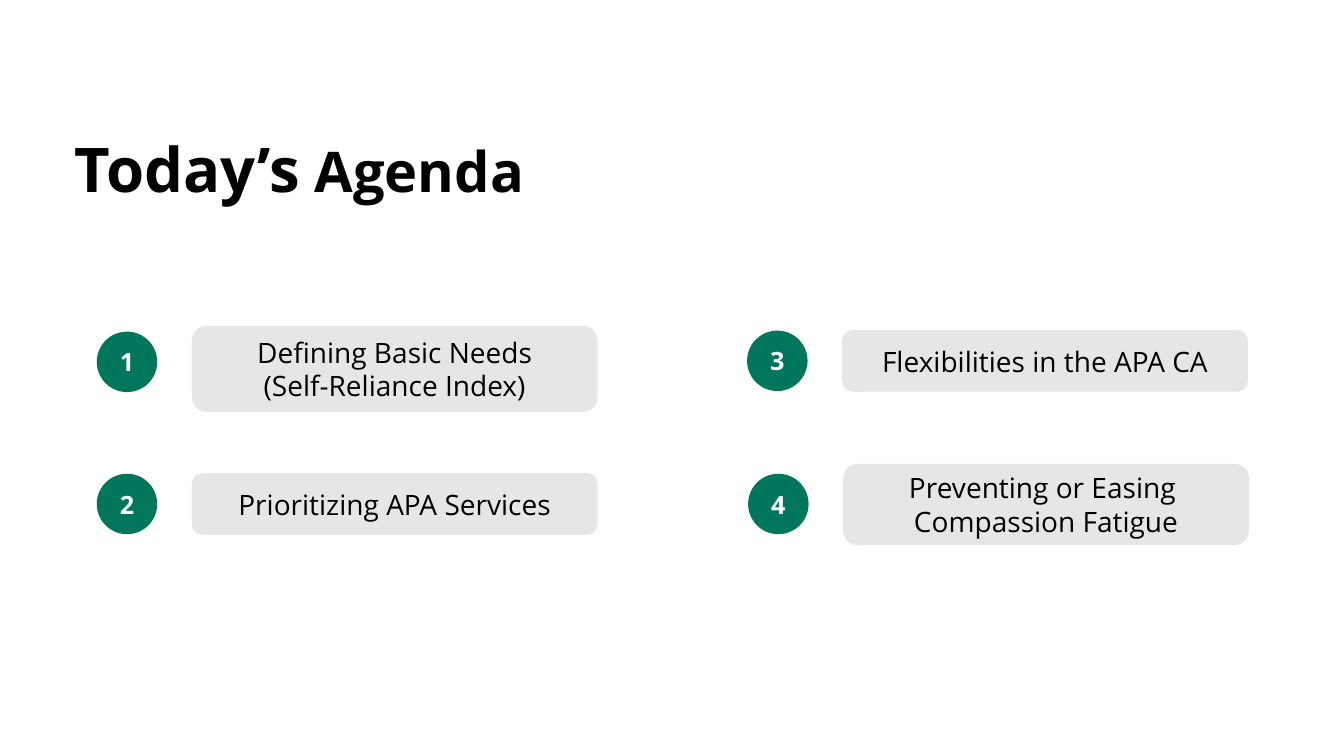
"""Build the agenda slide with four numbered topics."""
from pptx import Presentation
from pptx.dml.color import RGBColor
from pptx.enum.shapes import MSO_SHAPE
from pptx.enum.text import MSO_ANCHOR, MSO_AUTO_SIZE, PP_ALIGN
from pptx.util import Inches, Pt

TITLE = [("Today’s", 44), (" Agenda", 40)]
TOPICS = [
    ("Defining Basic Needs\n(Self-Reliance Index)", 0.96, 3.29, 3.24, 0.84),
    ("Prioritizing APA Services", 0.96, 4.7, 4.7, 0.6),
    ("Flexibilities in the APA CA", 7.41, 3.28, 3.28, 0.6),
    ("Preventing or Easing \nCompassion Fatigue", 7.42, 4.7, 4.61, 0.79),
]
FONT = "Open Sans"
BADGE_SIZE = 0.6
BAR_OFFSET, BAR_WIDTH = 0.95, 4.01

BLACK = RGBColor(0x00, 0x00, 0x00)
WHITE = RGBColor(0xFF, 0xFF, 0xFF)
GREEN = RGBColor(0x00, 0x76, 0x5A)
GRAY = RGBColor(0xE7, 0xE6, 0xE6)

OVAL, ROUNDED = MSO_SHAPE.OVAL, MSO_SHAPE.ROUNDED_RECTANGLE
MIDDLE = MSO_ANCHOR.MIDDLE
LEFT, CENTER = PP_ALIGN.LEFT, PP_ALIGN.CENTER
NO_FIT = MSO_AUTO_SIZE.NONE


def style_run(r, size, color, bold):
    r.font.name = FONT
    r.font.size = Pt(size)
    r.font.bold = bold
    r.font.color.rgb = color


def add_title(slide):
    sp = slide.shapes.title
    sp.left, sp.top = Inches(0.64), Inches(1.25)
    sp.width, sp.height = Inches(7.46), Inches(0.84)
    tf = sp.text_frame
    tf.auto_size = NO_FIT
    tf.vertical_anchor = MIDDLE
    p = tf.paragraphs[0]
    p.alignment = LEFT
    for text, size in TITLE:
        r = p.add_run()
        r.text = text
        style_run(r, size, BLACK, True)


def add_label(slide, kind, box, fill, text, size, color, bold):
    sp = slide.shapes.add_shape(kind, *map(Inches, box))
    sp.shadow.inherit = False
    sp.fill.solid()
    sp.fill.fore_color.rgb = fill
    tf = sp.text_frame
    tf.word_wrap = True
    tf.vertical_anchor = MIDDLE
    tf.text = text
    for p in tf.paragraphs:
        p.alignment = CENTER
        for r in p.runs:
            style_run(r, size, color, bold)
    return sp


def main():
    prs = Presentation()
    prs.slide_width, prs.slide_height = Inches(13.33), Inches(7.5)
    slide = prs.slides.add_slide(prs.slide_layouts[5])
    add_title(slide)
    for number, (topic, left, badge_top, bar_top, bar_height) in enumerate(TOPICS, 1):
        badge_box = (left, badge_top, BADGE_SIZE, BADGE_SIZE)
        badge = add_label(slide, OVAL, badge_box, GREEN, str(number), 18, WHITE, True)
        badge.line.fill.background()
        bar_box = (left + BAR_OFFSET, bar_top, BAR_WIDTH, bar_height)
        bar = add_label(slide, ROUNDED, bar_box, GRAY, topic, 20, BLACK, False)
        bar.line.color.rgb = GRAY
        bar.line.width = Pt(1)
    prs.save("out.pptx")


if __name__ == "__main__":
    main()
